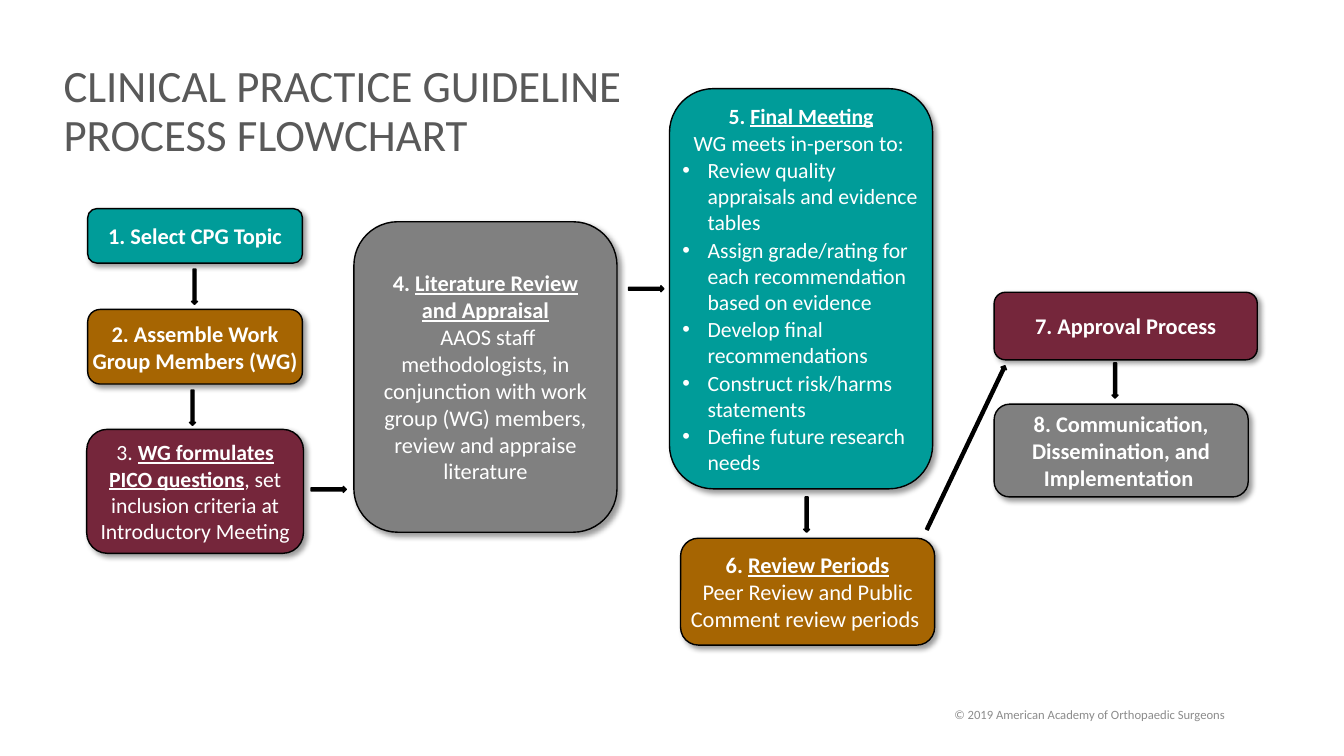
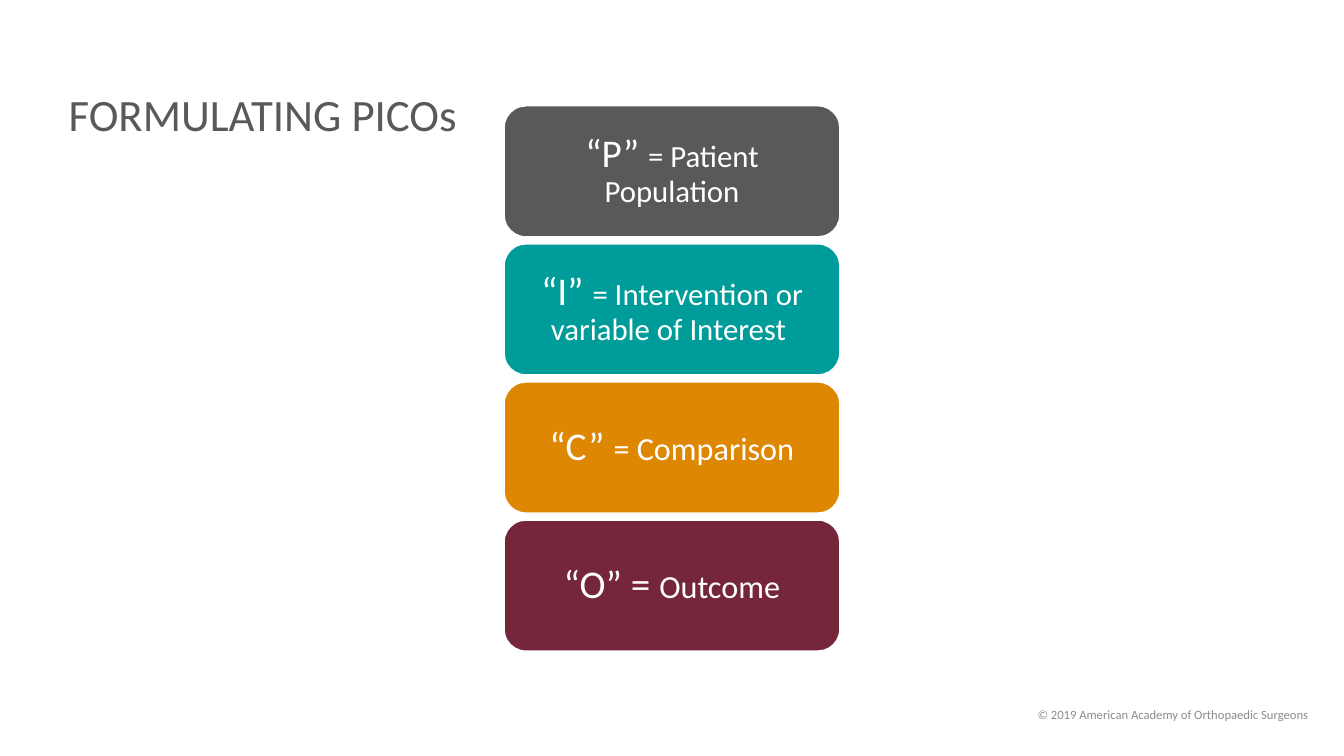
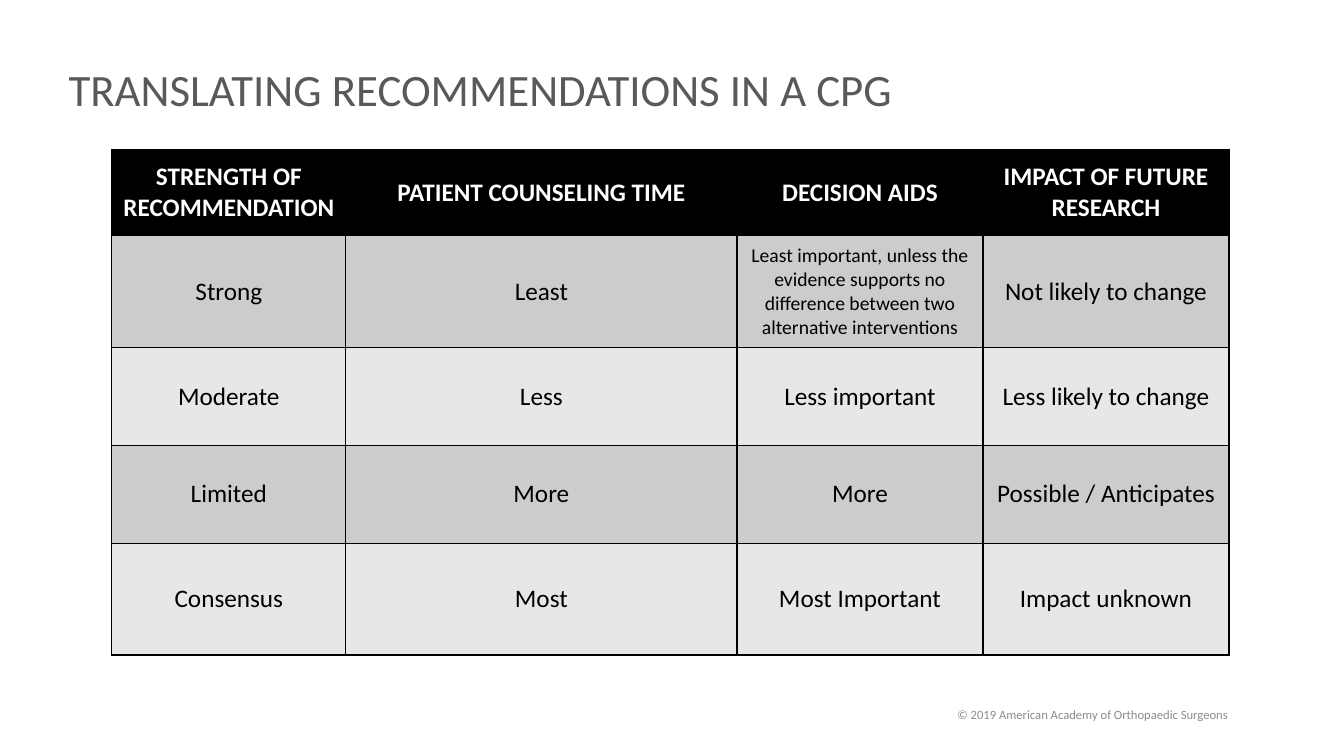
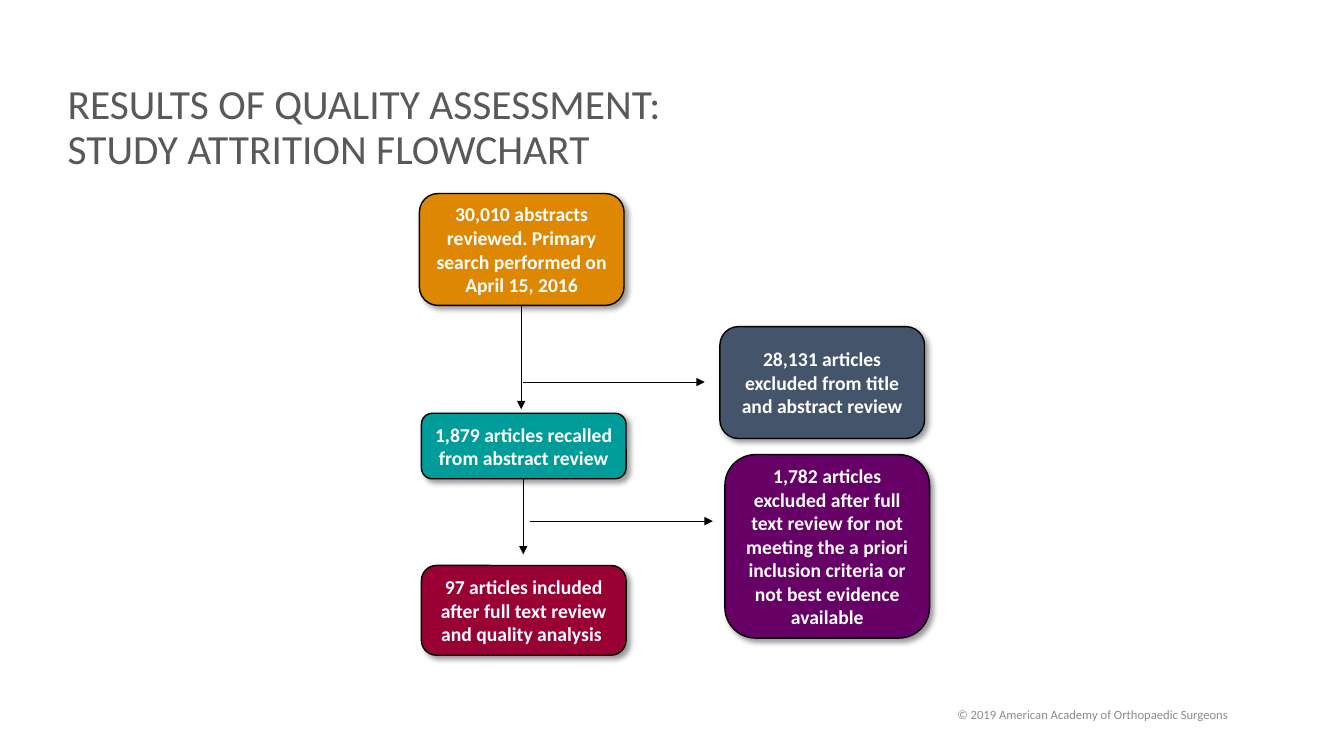
from collections import namedtuple

from lxml.etree import SubElement
from pptx import Presentation
from pptx.dml.color import RGBColor
from pptx.enum.shapes import MSO_CONNECTOR, MSO_SHAPE
from pptx.enum.text import MSO_ANCHOR, MSO_AUTO_SIZE, PP_ALIGN
from pptx.oxml.ns import qn
from pptx.util import Inches, Pt

FONT = "Calibri"
COLOURS = {
    "white": "FFFFFF",
    "black": "000000",
    "title": "595959",
    "footer": "8C8C8C",
    "teal": "009C99",
    "brown": "A66502",
    "orange": "DE8703",
    "wine": "75263B",
    "grey": "808080",
    "slate": "44546A",
    "purple": "660066",
    "crimson": "990033",
    "dark band": "CCCCCC",
    "light band": "E7E7E7",
}
FOOTER = "© 2019 American Academy of Orthopaedic Surgeons "
NO_INSETS = (0, 0)
SMALL_INSETS = (0.04, 0.04)
USUAL_INSETS = (0.1, 0.05)

Run = namedtuple("Run", "text bold underline size", defaults=(None, None, None))
Paragraph = namedtuple("Paragraph", "runs bold indented bullet", defaults=(None, False, False))


def colour(name):
    return RGBColor.from_string(COLOURS[name])


def indent(paragraph, bullet):
    properties = paragraph._p.get_or_add_pPr()
    properties.set("marL", str(Inches(0.25)))
    properties.set("indent", str(-Inches(0.25)))
    if bullet:
        SubElement(properties, qn("a:buFont"), typeface="Arial")
        SubElement(properties, qn("a:buChar"), char="•")


def write_text(frame, paragraphs, size, text_colour="white", bold=False,
               align=PP_ALIGN.CENTER, line_spacing=None, space_after=None):
    for index, content in enumerate(paragraphs):
        if isinstance(content, str):
            content = Paragraph([Run(content)])
        paragraph = frame.paragraphs[0] if index == 0 else frame.add_paragraph()
        paragraph.alignment = PP_ALIGN.LEFT if content.bullet else align
        if line_spacing:
            paragraph.line_spacing = line_spacing
        if space_after:
            paragraph.space_after = Pt(space_after)
        if content.indented or content.bullet:
            indent(paragraph, content.bullet)
        paragraph.font.name = FONT
        paragraph.font.size = Pt(size)
        paragraph.font.bold = bold if content.bold is None else content.bold
        paragraph.font.color.rgb = colour(text_colour)
        for part in content.runs:
            run = paragraph.add_run()
            run.text = part.text
            if part.bold is not None:
                run.font.bold = part.bold
            if part.underline is not None:
                run.font.underline = part.underline
            if part.size:
                run.font.size = Pt(part.size)


def set_frame(frame, insets=USUAL_INSETS):
    frame.word_wrap = True
    frame.auto_size = MSO_AUTO_SIZE.NONE
    frame.vertical_anchor = MSO_ANCHOR.MIDDLE
    frame.margin_left = frame.margin_right = Inches(insets[0])
    frame.margin_top = frame.margin_bottom = Inches(insets[1])


def add_slide(presentation, title_lines, title_box, title_size=32,
              footer_left=8.6, footer_align=PP_ALIGN.CENTER):
    slide = presentation.slides.add_slide(presentation.slide_layouts[5])
    title = slide.shapes.title
    title.left, title.top, title.width, title.height = map(Inches, title_box)
    set_frame(title.text_frame)
    write_text(title.text_frame, title_lines, title_size, "title",
               align=PP_ALIGN.LEFT, line_spacing=0.9)
    footer = slide.shapes.add_textbox(*map(Inches, (footer_left, 6.89, 4.5, 0.4)))
    set_frame(footer.text_frame)
    write_text(footer.text_frame, [FOOTER], 9, "footer", align=footer_align)
    return slide


def add_preset(slide, preset, box, fill, line="black"):
    shape = slide.shapes.add_shape(preset, *map(Inches, box))
    shape.fill.solid()
    shape.fill.fore_color.rgb = colour(fill)
    shape.line.color.rgb = colour(line)
    shape.line.width = Pt(1)
    shape.shadow.inherit = False
    return shape


def add_box(slide, box, fill, paragraphs, size, insets=USUAL_INSETS,
            line="black", shadow=True, **text_style):
    shape = add_preset(slide, MSO_SHAPE.ROUNDED_RECTANGLE, box, fill, line)
    if shadow:
        effects = shape._element.spPr.find(qn("a:effectLst"))
        outer = SubElement(effects, qn("a:outerShdw"), blurRad=str(Pt(4)),
                           dist=str(Pt(3)), dir=str(45 * 60000),
                           algn="tl", rotWithShape="0")
        black = SubElement(outer, qn("a:srgbClr"), val=COLOURS["black"])
        SubElement(black, qn("a:alpha"), val="40000")
    set_frame(shape.text_frame, insets)
    write_text(shape.text_frame, paragraphs, size, **text_style)


def add_block_arrow(slide, left, top, rotation=0, length=0.35):
    arrow = add_preset(slide, MSO_SHAPE.DOWN_ARROW, (left, top, 0.06, length), "black")
    arrow.rotation = rotation


def add_line_arrow(slide, start, end):
    connector = slide.shapes.add_connector(
        MSO_CONNECTOR.STRAIGHT, *map(Inches, start + end))
    connector.line.color.rgb = colour("black")
    connector.line.width = Pt(0.5)
    SubElement(connector.line._get_or_add_ln(), qn("a:tailEnd"), type="triangle")
    SubElement(connector._element.spPr, qn("a:effectLst"))


def headed(number, heading):
    return Paragraph([Run(number), Run(heading, underline=True)], bold=True)


def add_process_slide(presentation):
    slide = add_slide(presentation, ["CLINICAL PRACTICE GUIDELINE", "PROCESS FLOWCHART"],
                      (0.53, 0.74, 12.17, 0.75), footer_left=8.57)
    pico_step = Paragraph([
        Run("3. "),
        Run("WG formulates PICO questions", bold=True, underline=True),
        Run(", set inclusion criteria at Introductory Meeting"),
    ])
    meeting_tasks = [
        "Review quality appraisals and evidence tables",
        "Assign grade/rating for each recommendation based on evidence",
        "Develop final recommendations",
        "Construct risk/harms statements",
        "Define future research needs",
    ]
    meeting_step = [
        headed("5. ", "Final Meeting"),
        Paragraph([Run("WG meets in-person to: ")], indented=True),
    ] + [Paragraph([Run(task)], bullet=True) for task in meeting_tasks]
    literature_step = [
        headed("4. ", "Literature Review and Appraisal"),
        " AAOS staff methodologists, in conjunction with work group (WG) members, "
        "review and appraise literature",
    ]
    review_step = [
        headed("6. ", "Review Periods"),
        "Peer Review and Public Comment review periods ",
    ]

    add_box(slide, (0.87, 2.07, 2.13, 0.54), "teal", ["1. Select CPG Topic"], 16,
            SMALL_INSETS, bold=True)
    add_box(slide, (0.87, 3.07, 2.13, 0.74), "brown",
            ["2. Assemble Work Group Members (WG)"], 16, NO_INSETS, bold=True)
    add_box(slide, (0.86, 4.26, 2.15, 1.23), "wine", [pico_step], 15.5, NO_INSETS)
    add_box(slide, (3.51, 2.2, 2.61, 3.08), "grey", literature_step, 16)
    add_box(slide, (6.75, 5.34, 2.52, 1.06), "brown", review_step, 16, NO_INSETS)
    add_box(slide, (6.64, 0.88, 2.61, 3.97), "teal", meeting_step, 15.5, NO_INSETS,
            space_after=1)
    add_box(slide, (9.86, 2.9, 2.61, 0.67), "wine", ["7. Approval Process"], 16, bold=True)
    add_box(slide, (9.86, 4.01, 2.52, 0.92), "grey",
            ["8. Communication, Dissemination, and Implementation "], 16, NO_INSETS,
            bold=True)

    for left, top in [(1.9, 2.67), (1.88, 3.87), (11.03, 3.6), (7.97, 4.93)]:
        add_block_arrow(slide, left, top)
    for left, top in [(3.23, 4.68), (6.38, 2.69)]:
        add_block_arrow(slide, left, top, rotation=270)
    add_block_arrow(slide, 9.55, 3.54, rotation=205.5, length=1.8)


def add_pico_slide(presentation):
    slide = add_slide(presentation, ["FORMULATING PICOs"], (0.58, 0.79, 12.17, 0.75),
                      footer_align=PP_ALIGN.RIGHT)
    elements = [
        ("title", "“P” ", "= Patient Population", 22),
        ("teal", "“I” ", "= Intervention or variable of Interest ", 22),
        ("orange", "“C” ", "= Comparison", 23),
        ("wine", "“O” = ", "Outcome", 23),
    ]
    height, gap = 1.3, 0.07
    for index, (fill, letter, meaning, size) in enumerate(elements):
        add_box(slide, (5, 1.05 + index * (height + gap), 3.33, height), fill,
                [Paragraph([Run(letter), Run(meaning, size=size)])], 28,
                insets=(0.12, 0.06), line="white", shadow=False, line_spacing=0.9)


def format_cell(cell, text, fill, size, text_colour, bold, insets):
    properties = cell._tc.get_or_add_tcPr()
    for side in ("a:lnL", "a:lnR", "a:lnT", "a:lnB"):
        border = SubElement(properties, qn(side), w=str(Pt(1)))
        SubElement(SubElement(border, qn("a:solidFill")), qn("a:srgbClr"),
                   val=COLOURS["black"])
    cell.fill.solid()
    cell.fill.fore_color.rgb = colour(fill)
    cell.vertical_anchor = MSO_ANCHOR.MIDDLE
    cell.margin_left = cell.margin_right = Inches(insets[0])
    cell.margin_top = cell.margin_bottom = Inches(insets[1])
    write_text(cell.text_frame, [text], size, text_colour, bold)


def add_recommendation_slide(presentation):
    slide = add_slide(presentation, ["TRANSLATING RECOMMENDATIONS IN A CPG"],
                      (0.58, 0.54, 12.17, 0.75))
    long_answer = ("Least important, unless the evidence supports no difference "
                   "between two alternative interventions")
    rows = [
        ("STRENGTH OF RECOMMENDATION", "PATIENT COUNSELING TIME", "DECISION AIDS",
         "IMPACT OF FUTURE RESEARCH"),
        ("Strong", "Least", long_answer, "Not likely to change"),
        ("Moderate", "Less", "Less important", "Less likely to change"),
        ("Limited", "More", "More", "Possible / Anticipates"),
        ("Consensus", "Most", "Most Important", "Impact unknown"),
    ]
    widths = [2.32, 3.88, 2.44, 2.44]
    heights = [0.86, 1.11, 0.97, 0.97, 1.11]
    table = slide.shapes.add_table(
        len(rows), len(widths),
        *map(Inches, (1.11, 1.48, sum(widths), sum(heights)))).table
    for column, width in zip(table.columns, widths):
        column.width = Inches(width)
    for row_index, (row, height) in enumerate(zip(rows, heights)):
        table.rows[row_index].height = Inches(height)
        header = row_index == 0
        band = "dark band" if row_index % 2 else "light band"
        for column_index, text in enumerate(row):
            narrow = not header and column_index < 2
            format_cell(table.cell(row_index, column_index), text,
                        fill="black" if header else band,
                        size=14 if text == long_answer else 18,
                        text_colour="white" if header else "black",
                        bold=header,
                        insets=(0.05, 0.05) if narrow else USUAL_INSETS)


def add_attrition_slide(presentation):
    slide = add_slide(presentation,
                      ["RESULTS OF QUALITY ASSESSMENT:", "STUDY ATTRITION FLOWCHART"],
                      (0.57, 0.59, 6.43, 1.37), title_size=29.6)
    arrows = [
        ((5.19, 3.79), (6.99, 3.79)),
        ((5.19, 4.37), (5.19, 5.5)),
        ((5.26, 5.17), (7.07, 5.17)),
        ((5.17, 2.94), (5.17, 4.06)),
    ]
    for start, end in arrows:
        add_line_arrow(slide, start, end)
    stages = [
        (7.14, 3.24, 1.11, "slate", "28,131 articles excluded from title and abstract review"),
        (4.16, 1.92, 1.11, "orange",
         "30,010 abstracts reviewed. Primary search performed on April 15, 2016"),
        (4.18, 4.1, 0.65, "teal", "1,879 articles recalled from abstract review"),
        (7.19, 4.51, 1.82, "purple",
         "1,782 articles excluded after full text review for not meeting the a priori "
         "inclusion criteria or not best evidence available"),
        (4.18, 5.61, 0.89, "crimson",
         "97 articles included after full text review and quality analysis "),
    ]
    for left, top, height, fill, text in stages:
        add_box(slide, (left, top, 2.03, height), fill, [text], 14, bold=True)


def main():
    presentation = Presentation()
    presentation.slide_width = Inches(13.33)
    presentation.slide_height = Inches(7.5)
    add_process_slide(presentation)
    add_pico_slide(presentation)
    add_recommendation_slide(presentation)
    add_attrition_slide(presentation)
    presentation.save("out.pptx")


if __name__ == "__main__":
    main()
